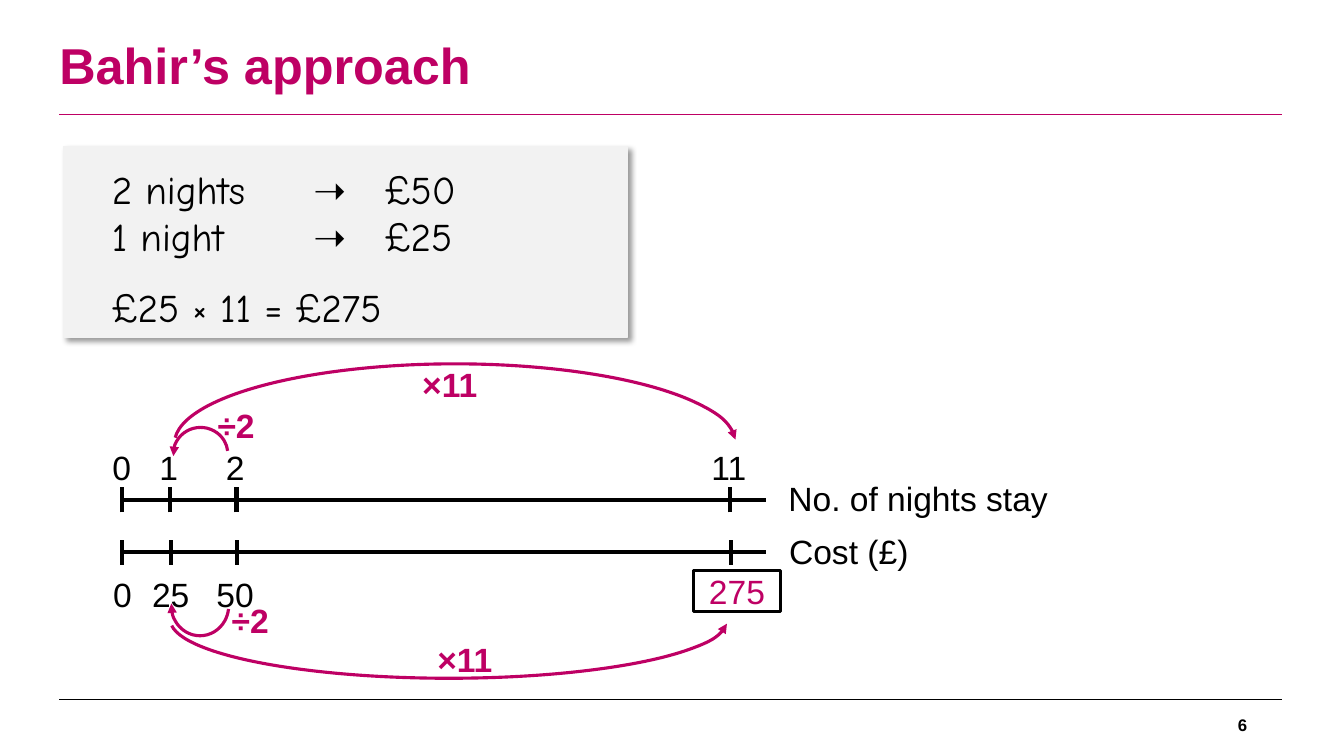
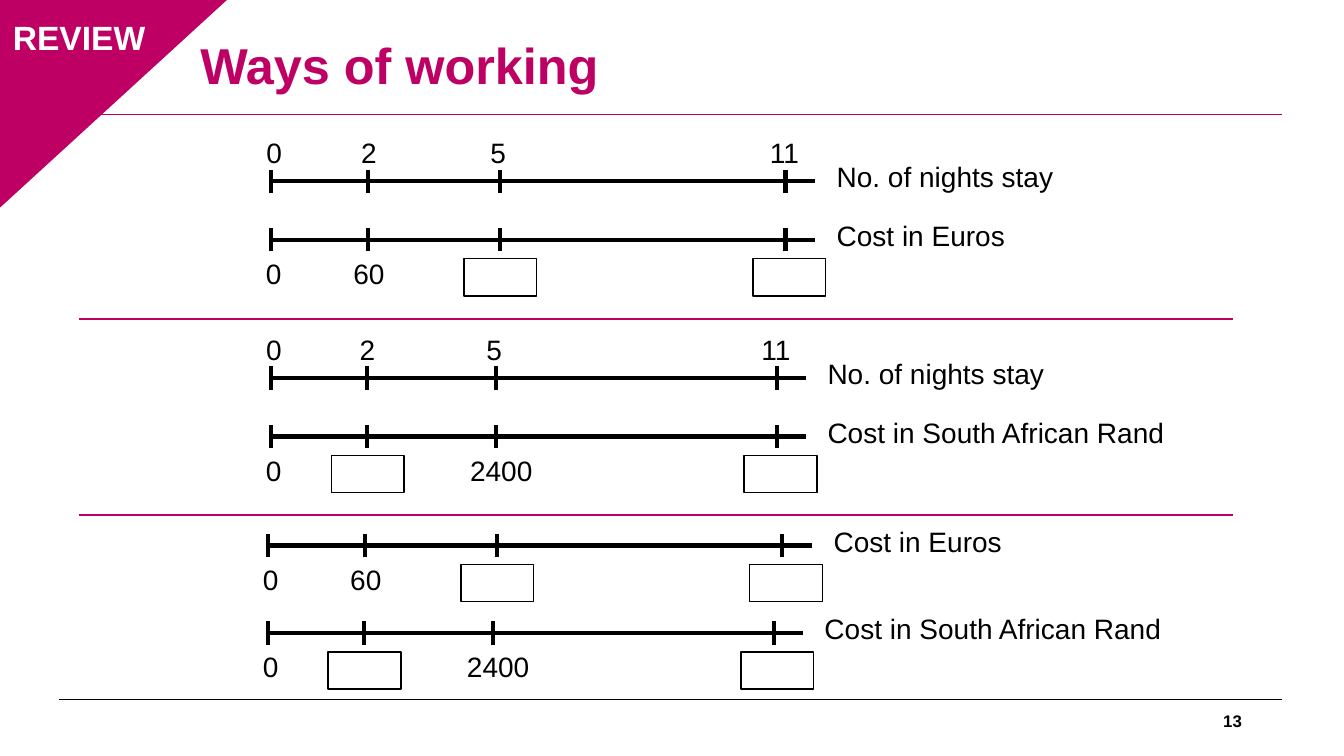
from lxml import etree
from pptx import Presentation
from pptx.dml.color import RGBColor
from pptx.enum.shapes import MSO_CONNECTOR, MSO_SHAPE
from pptx.enum.text import MSO_ANCHOR, PP_ALIGN
from pptx.oxml.ns import qn
from pptx.util import Pt

STRAIGHT = MSO_CONNECTOR.STRAIGHT
RECTANGLE, TRIANGLE, ARC = MSO_SHAPE.RECTANGLE, MSO_SHAPE.ISOSCELES_TRIANGLE, MSO_SHAPE.ARC
TOP, MIDDLE = MSO_ANCHOR.TOP, MSO_ANCHOR.MIDDLE
LEFT, CENTRE, RIGHT = PP_ALIGN.LEFT, PP_ALIGN.CENTER, PP_ALIGN.RIGHT

PINK, BLACK, WHITE, GREY = "BE0064", "000000", "FFFFFF", "F2F2F2"
BODY_FONT, HAND_FONT = "Arial", "Comic Neue"
SLIDE_WIDTH, SLIDE_HEIGHT = 960, 540
RULE_LEFT, RULE_RIGHT, TITLE_RULE, FOOTER_RULE = 42.5, 916, 82, 499.7
TITLE_FORMAT = {"size": Pt(36), "bold": True}
FOOTER_FORMAT = {"size": Pt(12), "bold": True}
STRONG_FORMAT = {"size": Pt(24), "bold": True}
NO_INSETS = {"margin_left": 0, "margin_right": 0, "margin_top": 0, "margin_bottom": 0}

NIGHT_FRACTIONS = {0: 0.002, 1: 0.077, 2: 0.18, 5: 0.421, 11: 0.945}
LARGE_AXIS = {"size": 24, "tick": 9, "above": -41, "below": 12, "caption_gap": 9,
              "caption_top": -19, "box": (62, 29), "box_top": 13, "box_line": 2.25}
SMALL_AXIS = {"size": 20, "tick": 8.3, "above": -36, "below": 8.5, "caption_gap": 8,
              "caption_top": -18.7, "box": (52, 26.6), "box_top": 13.5, "box_line": 1}
EURO_LENGTH, RAND_LENGTH = 389.5, 383


def colour(hex_text):
    return RGBColor.from_string(hex_text)


def apply_format(target, values):
    for name, value in values.items():
        setattr(target, name, value)


def add_effects(shape):
    return etree.SubElement(shape._element.spPr, qn("a:effectLst"))


def add_rule(slide, start, end, line_colour=BLACK, width=3):
    rule = slide.shapes.add_connector(STRAIGHT, *(Pt(value) for value in start + end))
    rule.line.color.rgb = colour(line_colour)
    rule.line.width = Pt(width)
    add_effects(rule)


def add_preset(slide, kind, box, fill=None, line=BLACK, width=1):
    shape = slide.shapes.add_shape(kind, *(Pt(value) for value in box))
    shape.shadow.inherit = False
    if fill:
        shape.fill.solid()
        shape.fill.fore_color.rgb = colour(fill)
    else:
        shape.fill.background()
    shape.line.color.rgb = colour(line)
    shape.line.width = Pt(width)
    return shape


def write_text(shape, lines, font, text_colour=BLACK, align=LEFT, anchor=TOP,
               name=BODY_FONT, spacings=None, frame=None):
    text_frame = shape.text_frame
    apply_format(text_frame, {"word_wrap": True, "vertical_anchor": anchor, **(frame or {})})
    for index, line in enumerate(lines):
        paragraph = text_frame.add_paragraph() if index else text_frame.paragraphs[0]
        paragraph.alignment = align
        if spacings:
            paragraph.line_spacing = spacings[index]
        run = paragraph.add_run()
        run.text = line
        apply_format(run.font, {"name": name, **font})
        run.font.color.rgb = colour(text_colour)


def add_text(slide, box, lines, font, **options):
    shape = slide.shapes.add_textbox(*(Pt(value) for value in box))
    write_text(shape, lines, font, **options)
    return shape


def flip_vertically(shape):
    shape._element.spPr.xfrm.set("flipV", "1")


def add_frame(presentation, title, title_left, number, number_box):
    slide = presentation.slides.add_slide(presentation.slide_layouts[6])
    add_rule(slide, (RULE_LEFT, FOOTER_RULE), (RULE_RIGHT, FOOTER_RULE), BLACK, 0.75)
    add_rule(slide, (RULE_LEFT, TITLE_RULE), (RULE_RIGHT, TITLE_RULE), PINK, 0.75)
    add_text(slide, (title_left, 8.6, 756 - title_left, 80), [title], TITLE_FORMAT,
             text_colour=PINK, anchor=MIDDLE, spacings=[0.9])
    add_text(slide, number_box, [number], FOOTER_FORMAT, align=RIGHT, anchor=MIDDLE)
    return slide


def add_number_line(slide, left, top, length, caption, style, nights, side="below",
                    labels=None, boxes=None):
    font = {"size": Pt(style["size"])}
    ticks = {night: left + length * NIGHT_FRACTIONS[night] for night in nights}
    add_rule(slide, (left, top), (left + length, top))
    for position in ticks.values():
        add_rule(slide, (position, top + style["tick"]), (position, top - style["tick"]))
    for night, (text, shift) in (labels or {}).items():
        add_text(slide, (ticks[night] + shift - 36, top + style[side], 72, 32), [text], font,
                 align=CENTRE)
    width, height = style["box"]
    for night, (text, shift) in (boxes or {}).items():
        box = (ticks[night] + shift - width / 2, top + style["box_top"], width, height)
        shape = add_preset(slide, RECTANGLE, box, width=style["box_line"])
        if text:
            write_text(shape, [text], font, text_colour=PINK, align=CENTRE, anchor=MIDDLE,
                       frame=NO_INSETS)
    add_text(slide, (left + length + style["caption_gap"], top + style["caption_top"], 270, 32),
             [caption], font)


def add_working_card(slide, left, top, width, height):
    card = add_preset(slide, RECTANGLE, (left, top, width, height), GREY, GREY)
    effects = card._element.spPr.find(qn("a:effectLst"))
    shadow = etree.SubElement(effects, qn("a:outerShdw"), blurRad=str(Pt(4)), dist=str(Pt(3)),
                              dir="2700000", algn="tl", rotWithShape="0")
    shadow_colour = etree.SubElement(shadow, qn("a:srgbClr"), val=BLACK)
    etree.SubElement(shadow_colour, qn("a:alpha"), val="40000")
    lines = ["2 nights\t➝\t£50", "1 night\t➝\t£25", "£25 × 11 = £275"]
    working = add_text(slide, (left + 27.4, top + 9.4, width - 28, height - 16), lines,
                       {"size": Pt(28)}, name=HAND_FONT, spacings=[1, 1, 1.5])
    for paragraph in working.text_frame.paragraphs[:2]:
        tabs = etree.SubElement(paragraph._p.get_or_add_pPr(), qn("a:tabLst"))
        for position in (144, 195):
            etree.SubElement(tabs, qn("a:tab"), pos=str(Pt(position)), algn="l")


def add_arc(slide, box, angles, arrow_end, flipped):
    arc = add_preset(slide, ARC, box, line=PINK, width=2.25)
    for index, angle in enumerate(angles):
        arc.adjustments[index] = angle * 0.6
    if flipped:
        flip_vertically(arc)
    etree.SubElement(arc.line._get_or_add_ln(), qn("a:" + arrow_end), type="triangle")


def add_scaling_diagram(slide, left, top):
    nights = (0, 1, 2, 11)
    add_number_line(slide, left, top, 461, "No. of nights stay", LARGE_AXIS, nights, "above",
                    {0: ("0", 0), 1: ("1", -1), 2: ("2", -1), 11: ("11", -1)})
    add_number_line(slide, left + 0.5, top + 37.5, 461, "Cost (£)", LARGE_AXIS, nights,
                    labels={0: ("0", 0), 1: ("25", 0), 2: ("50", -1.5)},
                    boxes={11: ("275", 4.3)})
    long_angles, short_angles = (181.2, 359.2), (175.6, 353.4)
    arcs = [((38.6, -97.1, 401, 113.8), long_angles, "tailEnd", False),
            ((35.7, 44, 398, 83.5), long_angles, "tailEnd", True),
            ((37.8, -51.7, 39, 38), short_angles, "headEnd", False),
            ((36.4, 54.1, 41, 43), short_angles, "headEnd", True)]
    for (x, y, width, height), angles, arrow_end, flipped in arcs:
        add_arc(slide, (left + x, top + y, width, height), angles, arrow_end, flipped)
    factors = [("×11", 208.5, -100.7), ("×11", 219.3, 95.9), ("÷2", 62.3, -71.2), ("÷2", 72.4, 67.8)]
    for text, x, y in factors:
        add_text(slide, (left + x, top + y, 56, 36), [text], STRONG_FORMAT, text_colour=PINK)


def add_review_corner(slide, left, top, width, height):
    corner = add_preset(slide, TRIANGLE, (left, top, width, height), PINK, PINK)
    corner.adjustments[0] = 0
    flip_vertically(corner)
    add_text(slide, (left + 3, top + 10, 111, 32), ["REVIEW"], STRONG_FORMAT,
             text_colour=WHITE, align=CENTRE, frame={"word_wrap": False})


def add_currency_lines(slide, left, rows):
    night_labels = {0: ("0", 2), 2: ("2", 0.5), 5: ("5", -1.2), 11: ("11", -0.7)}
    scales = {
        "nights": ("No. of nights stay", "above", night_labels, {}),
        "euros": ("Cost in Euros", "below", {0: ("0", 1.7), 2: ("60", 0.4)},
                  {5: ("", 0.5), 11: ("", 2.7)}),
        "rand": ("Cost in South African Rand", "below", {0: ("0", 1.7), 5: ("2400", 3.8)},
                 {2: ("", 0.7), 11: ("", 2.6)}),
    }
    for scale, top, length in rows:
        caption, side, labels, boxes = scales[scale]
        add_number_line(slide, left, top, length, caption, SMALL_AXIS, night_labels, side,
                        labels, boxes)


def build_approach_slide(presentation):
    slide = add_frame(presentation, "Bahir’s approach", 35.3, "6", (682, 503.3, 216, 28.8))
    add_working_card(slide, 45.4, 105, 402.5, 136)
    add_scaling_diagram(slide, 86, 357)


def build_review_slide(presentation):
    slide = add_frame(presentation, "Ways of working", 136, "13", (678.2, 500.4, 216, 28.8))
    add_review_corner(slide, -2, -1.5, 165, 151)
    add_currency_lines(slide, 193, [("nights", 129.4, EURO_LENGTH), ("euros", 171.3, EURO_LENGTH)])
    add_currency_lines(slide, 193, [("nights", 270, RAND_LENGTH), ("rand", 311.8, RAND_LENGTH)])
    add_currency_lines(slide, 190.8, [("euros", 389.6, EURO_LENGTH), ("rand", 452.2, RAND_LENGTH)])
    for top in (228, 368):
        add_rule(slide, (56.5, top), (881, top), PINK, 1.5)


def main():
    presentation = Presentation()
    presentation.slide_width, presentation.slide_height = Pt(SLIDE_WIDTH), Pt(SLIDE_HEIGHT)
    build_approach_slide(presentation)
    build_review_slide(presentation)
    presentation.save("out.pptx")


if __name__ == "__main__":
    main()
